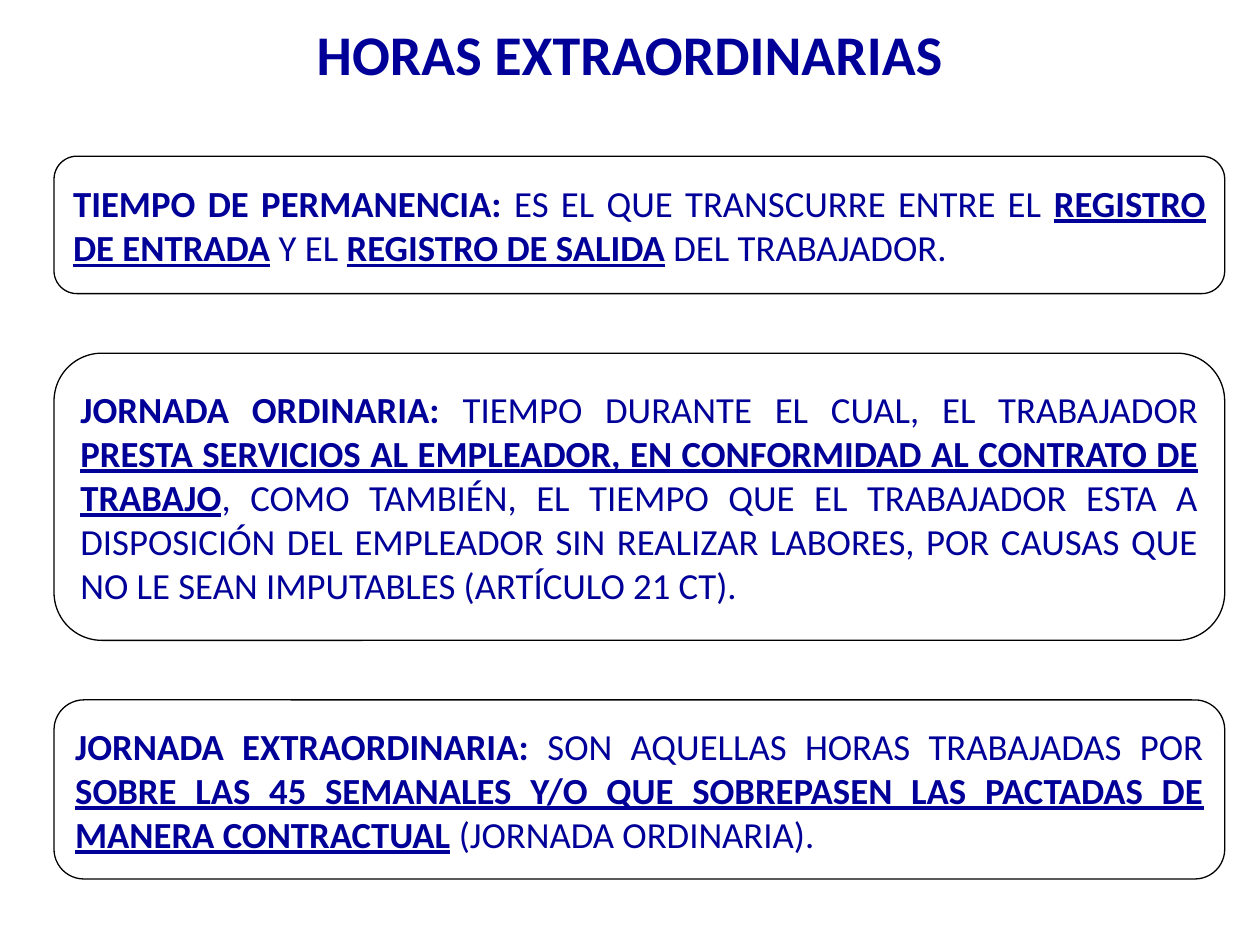
"""Build the slide that defines working time and overtime."""
import pptx
import pptx.util
import pptx.dml.color
import pptx.enum.shapes
import pptx.enum.text
import pptx.oxml.ns
import lxml.etree

Cm = pptx.util.Cm
Pt = pptx.util.Pt
ALIGN = pptx.enum.text.PP_ALIGN

COLORS = {"text": "000099", "panel": "FFFFFF", "outline": "000000"}
FORMATS = {
    "title": {"size": Pt(32), "bold": True},
    "term": {"size": Pt(21), "bold": True},
    "plain": {"size": Pt(21), "bold": False},
    "key": {"size": Pt(21), "bold": True, "underline": True},
}

TITLE = [("HORAS EXTRAORDINARIAS", "title")]
DEFINITIONS = [
    (2.77, [
        ("TIEMPO DE PERMANENCIA:", "term"),
        (" ES EL QUE TRANSCURRE ENTRE EL ", "plain"),
        ("REGISTRO DE ENTRADA", "key"),
        (" Y EL ", "plain"),
        ("REGISTRO DE SALIDA", "key"),
        (" DEL TRABAJADOR.", "plain"),
    ]),
    (5.79, [
        ("JORNADA ORDINARIA: ", "term"),
        ("TIEMPO DURANTE EL CUAL, EL TRABAJADOR ", "plain"),
        ("PRESTA SERVICIOS AL EMPLEADOR, EN CONFORMIDAD AL CONTRATO DE TRABAJO", "key"),
        (", COMO TAMBIÉN, EL TIEMPO QUE EL TRABAJADOR ESTA A DISPOSICIÓN DEL EMPLEADOR "
         "SIN REALIZAR LABORES, POR CAUSAS QUE NO LE SEAN IMPUTABLES (ARTÍCULO 21 CT).", "plain"),
    ]),
    (3.61, [
        ("JORNADA EXTRAORDINARIA: ", "term"),
        ("SON AQUELLAS HORAS TRABAJADAS POR ", "plain"),
        ("SOBRE LAS 45 SEMANALES Y/O QUE SOBREPASEN LAS PACTADAS DE MANERA CONTRACTUAL", "key"),
        (" (JORNADA ORDINARIA).", "plain"),
    ]),
]
LEFT, TOP, WIDTH, GAP = 1.09, 3.15, 23.6, 1.2


def color(name):
    return pptx.dml.color.RGBColor.from_string(COLORS[name])


def write(box, spans, alignment):
    frame = box.text_frame
    frame.word_wrap = True
    frame.vertical_anchor = pptx.enum.text.MSO_ANCHOR.MIDDLE
    para = frame.paragraphs[0]
    para.alignment = alignment
    for text, style in spans:
        span = para.add_run()
        span.text = text
        span.font.name = "Calibri"
        span.font.color.rgb = color("text")
        for attribute, value in FORMATS[style].items():
            setattr(span.font, attribute, value)


def add_panel(page, top, height):
    panel = page.shapes.add_shape(
        pptx.enum.shapes.MSO_SHAPE.ROUNDED_RECTANGLE, Cm(LEFT), Cm(top), Cm(WIDTH), Cm(height))
    panel.shadow.inherit = False
    panel.fill.solid()
    panel.fill.fore_color.rgb = color("panel")
    qn = pptx.oxml.ns.qn
    shade = panel.fill._xPr.find(qn("a:solidFill")).find(qn("a:srgbClr"))
    lxml.etree.SubElement(shade, qn("a:alpha")).set("val", "50000")
    panel.line.color.rgb = color("outline")
    panel.line.width = Pt(0.75)
    return panel


def main():
    deck = pptx.Presentation()
    deck.slide_width, deck.slide_height = Cm(25.4), Cm(19.05)
    page = deck.slides.add_slide(deck.slide_layouts[6])
    title = page.shapes.add_textbox(Cm(1.9), Cm(0.13), Cm(21.6), Cm(1.9))
    write(title, TITLE, ALIGN.CENTER)
    top = TOP
    for height, spans in DEFINITIONS:
        write(add_panel(page, top, height), spans, ALIGN.JUSTIFY)
        top += height + GAP
    deck.save("out.pptx")


if __name__ == "__main__":
    main()
